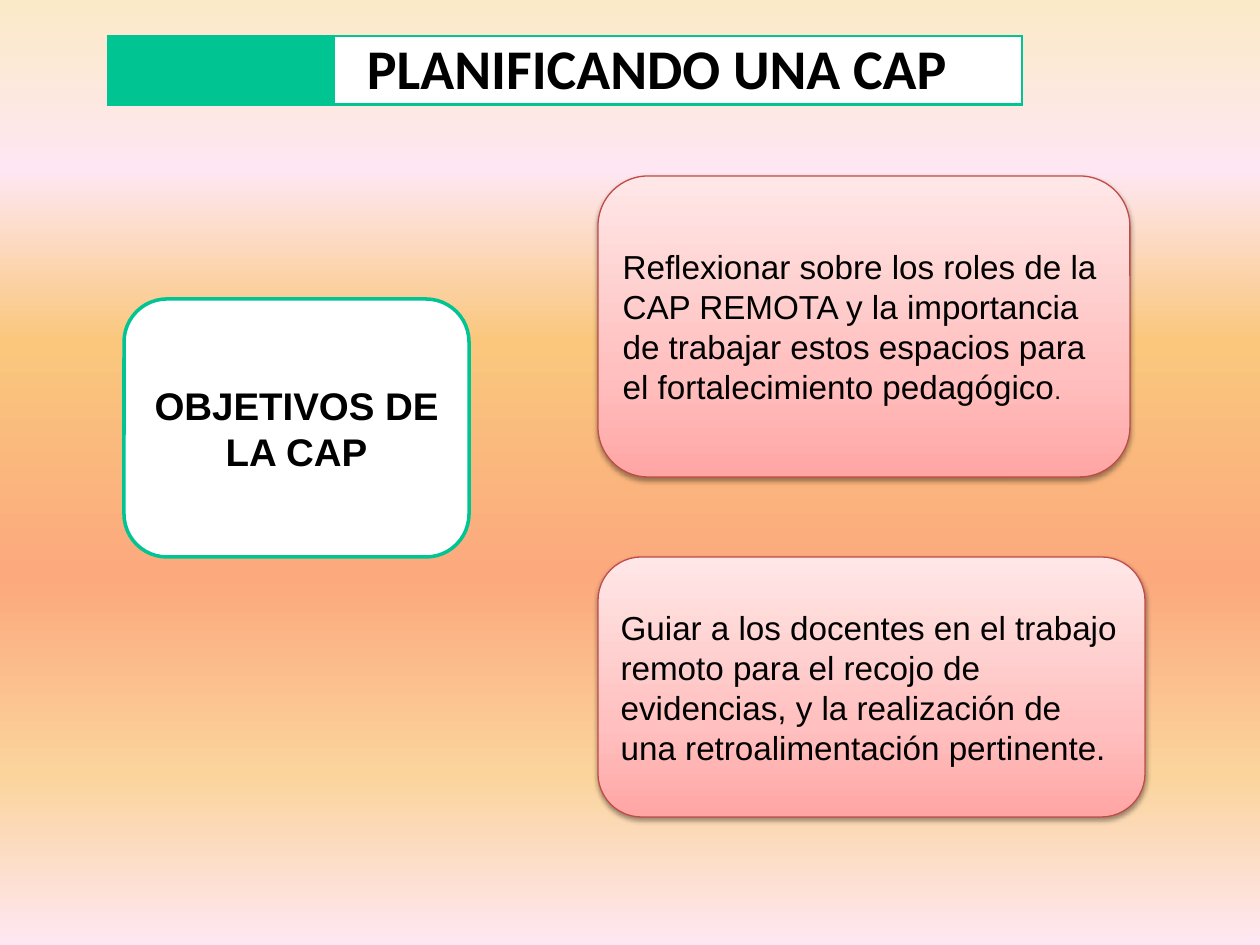
from lxml import etree
from pptx import Presentation
from pptx.dml.color import RGBColor
from pptx.enum.shapes import MSO_SHAPE
from pptx.enum.text import MSO_ANCHOR, PP_ALIGN
from pptx.oxml.ns import qn
from pptx.util import Pt

EMU_PER_PX = 914400 / 126
ROUNDED = MSO_SHAPE.ROUNDED_RECTANGLE
MIDDLE = MSO_ANCHOR.MIDDLE
LEFT, CENTER = PP_ALIGN.LEFT, PP_ALIGN.CENTER

GREEN, WHITE, BLACK, RED = "00C491", "FFFFFF", "000000", "BF4C48"
SUNSET = [(0, "FBEAC7"), (18, "FEE7F2"), (36, "FAC77D"),
          (61, "FBA97D"), (82, "FBD49C"), (100, "FEE7F2")]
PINK = [(0, "FFA6A5"), (35, "FFC0BF"), (100, "FFE7E7")]


def px(length):
    return round(length * EMU_PER_PX)


def rgb(value):
    return RGBColor.from_string(value)


def add_xml(parent, tag, **attributes):
    return etree.SubElement(parent, qn(tag), {k: str(v) for k, v in attributes.items()})


def paint_gradient(fill, owner, stops, angle):
    """Fill owner with (percent, colour) stops; angle is counter-clockwise."""
    fill.gradient()
    fill.gradient_angle = angle
    stop_list = next(owner.iter(qn("a:gsLst")))
    stop_list.clear()
    for percent, color in stops:
        stop = add_xml(stop_list, "a:gs", pos=percent * 1000)
        add_xml(stop, "a:srgbClr", val=color)


def add_shadow(shape):
    effects = next(shape.element.iter(qn("a:effectLst")))
    shadow = add_xml(effects, "a:outerShdw", blurRad=Pt(3.1), dist=Pt(1.6),
                     dir=90 * 60000, rotWithShape=0)
    color = add_xml(shadow, "a:srgbClr", val=BLACK)
    add_xml(color, "a:alpha", val=38000)


def write(frame, *runs, font="Arial", bold=False, align=LEFT):
    """Write (text, point size) runs as one paragraph."""
    paragraph = frame.paragraphs[0]
    paragraph.alignment = align
    for text, size in runs:
        run = paragraph.add_run()
        run.text = text
        run.font.name = font
        run.font.size = Pt(size)
        run.font.bold = bold
        run.font.color.rgb = rgb(BLACK)


def add_card(slide, left, top, width, height, line, weight):
    card = slide.shapes.add_shape(ROUNDED, px(left), px(top), px(width), px(height))
    card.shadow.inherit = False
    card.fill.solid()
    card.fill.fore_color.rgb = rgb(WHITE)
    card.line.color.rgb = rgb(line)
    card.line.width = Pt(weight)
    frame = card.text_frame
    frame.word_wrap = True
    frame.vertical_anchor = MIDDLE
    frame.margin_left = frame.margin_right = px(10)
    frame.margin_top = frame.margin_bottom = px(5)
    return card


def add_goal(slide, left, top, width, height, *runs):
    goal = add_card(slide, left, top, width, height, RED, 0.75)
    paint_gradient(goal.fill, goal.element, PINK, 90)
    add_shadow(goal)
    write(goal.text_frame, *runs)


def style_cell(cell, color):
    cell.fill.solid()
    cell.fill.fore_color.rgb = rgb(color)
    cell.vertical_anchor = MIDDLE
    cell.margin_top = cell.margin_bottom = 0
    properties = cell._tc.get_or_add_tcPr()
    for position, side in enumerate(("a:lnL", "a:lnR", "a:lnT", "a:lnB")):
        border = add_xml(properties, side, w=Pt(1.5))
        add_xml(add_xml(border, "a:solidFill"), "a:srgbClr", val=GREEN)
        properties.insert(position, border)


def add_title(slide):
    widths, height = (226, 688), 68
    table = slide.shapes.add_table(1, 2, px(108), px(36), px(sum(widths)), px(height)).table
    table.first_row = table.horz_banding = False
    table.rows[0].height = px(height)
    for column, width in zip(table.columns, widths):
        column.width = px(width)
    accent, title = table.rows[0].cells
    style_cell(accent, GREEN)
    style_cell(title, WHITE)
    title.margin_left, title.margin_right = px(33), px(8)
    write(title.text_frame, ("PLANIFICANDO UNA CAP", 32), font="Calibri", bold=True)


def main():
    deck = Presentation()
    deck.slide_width, deck.slide_height = px(1260), px(945)
    slide = deck.slides.add_slide(deck.slide_layouts[6])
    paint_gradient(slide.background.fill, slide.element, SUNSET, 270)

    add_title(slide)
    topic = add_card(slide, 124, 299, 345, 258, GREEN, 2)
    write(topic.text_frame, ("OBJETIVOS DE LA CAP", 22), bold=True, align=CENTER)
    add_goal(slide, 598, 176, 532, 301,
             ("Reflexionar sobre los roles de la CAP REMOTA y la importancia de "
              "trabajar estos espacios para el fortalecimiento pedagógico", 19),
             (".", 14))
    add_goal(slide, 598, 557, 547, 260,
             ("Guiar a los docentes en el trabajo remoto para el recojo de evidencias, "
              "y la realización de una retroalimentación pertinente.", 19))
    deck.save("out.pptx")


if __name__ == "__main__":
    main()
